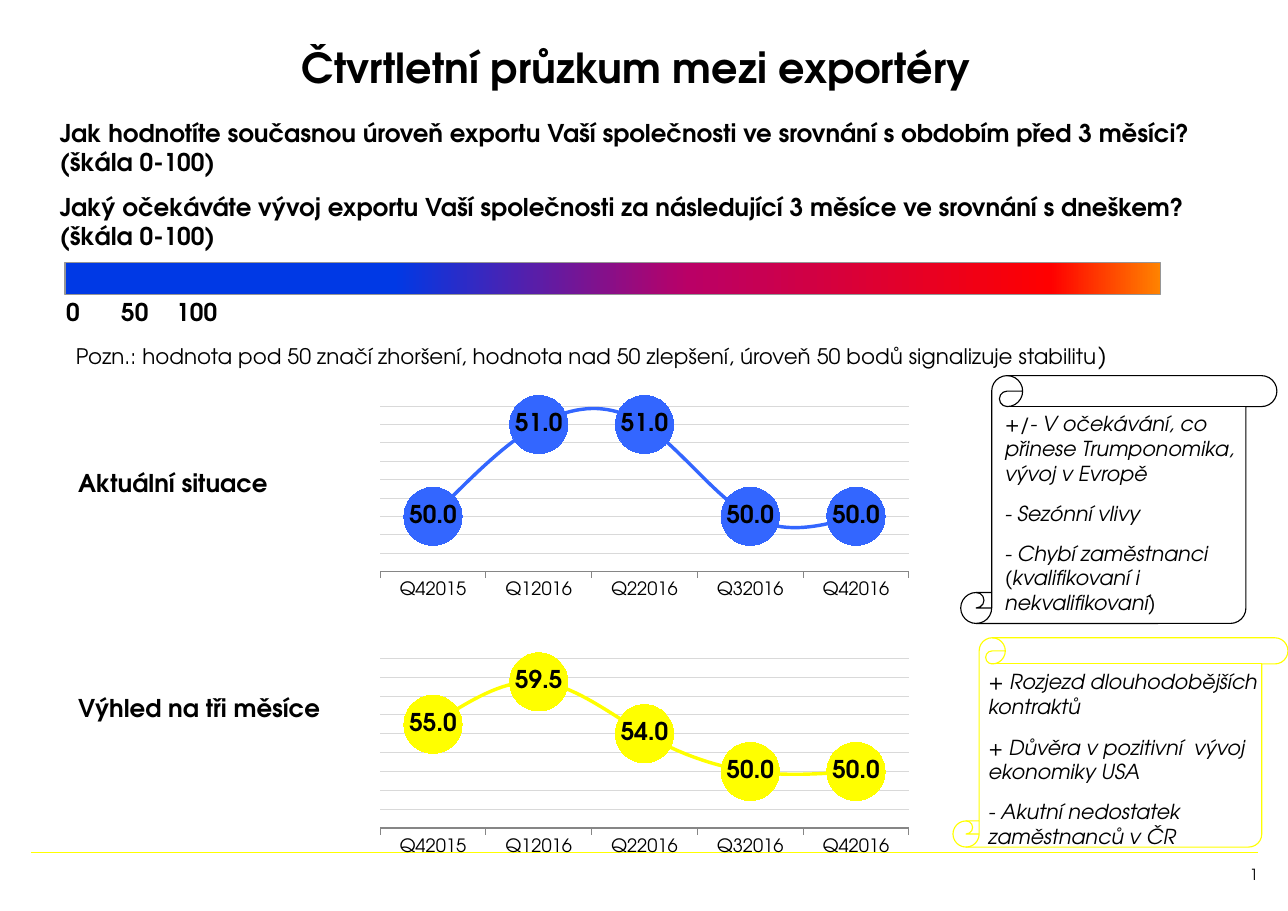
from dataclasses import dataclass

from lxml.etree import SubElement
from pptx import Presentation
from pptx.chart.data import CategoryChartData
from pptx.dml.color import RGBColor
from pptx.enum.chart import XL_CHART_TYPE as ChartType, XL_LABEL_POSITION as LabelPosition
from pptx.enum.chart import XL_MARKER_STYLE as MarkerStyle, XL_TICK_LABEL_POSITION as TickLabels
from pptx.enum.chart import XL_TICK_MARK as TickMark
from pptx.enum.shapes import MSO_CONNECTOR as Connector, MSO_SHAPE as Shape
from pptx.enum.text import MSO_ANCHOR as Anchor, MSO_AUTO_SIZE as AutoSize, PP_ALIGN as Align
from pptx.oxml import parse_xml
from pptx.oxml.ns import nsdecls, qn
from pptx.util import Inches, Pt


@dataclass(frozen=True)
class Theme:
    font: str = "TeX Gyre Adventor"
    black: str = "000000"
    blue: str = "3366FF"
    yellow: str = "FFFF00"
    grid: str = "D9D9D9"
    axis: str = "868686"
    bar_line: str = "969696"
    bar_stops: tuple = ((30, "0039E5"), (57, "BA0066"), (90, "FF0000"), (100, "FF8200"))
    title: float = 27
    heading: float = 16
    note: float = 14
    comment: float = 13.5
    category: float = 12
    page: float = 10


THEME = Theme()
PADDED = (0.12, 0.16, 0.12, 0)


def rgb(value):
    return RGBColor.from_string(value)


def style_font(font, size, bold=False, italic=False):
    font.name, font.size = THEME.font, Pt(size)
    font.bold, font.italic = bold, italic
    font.color.rgb = rgb(THEME.black)


def write_text(shape, paragraphs, size, bold=False, italic=False, align=Align.LEFT,
               anchor=Anchor.TOP, insets=PADDED, tabs=()):
    """A paragraph is a string, or a list of (text, size) runs."""
    frame = shape.text_frame
    frame.word_wrap, frame.auto_size, frame.vertical_anchor = True, AutoSize.NONE, anchor
    (frame.margin_left, frame.margin_top,
     frame.margin_right, frame.margin_bottom) = map(Inches, insets)
    for index, content in enumerate(paragraphs):
        paragraph = frame.add_paragraph() if index else frame.paragraphs[0]
        paragraph.alignment = align
        paragraph.space_before = Pt(10 if index else 0)
        properties = paragraph._p.get_or_add_pPr()
        properties.set("marL", "0")
        properties.set("indent", "0")
        SubElement(properties, qn("a:buNone"))
        if tabs:
            tab_list = SubElement(properties, qn("a:tabLst"))
            for position, kind in tabs:
                SubElement(tab_list, qn("a:tab"), pos=str(Inches(position)), algn=kind)
        for text, run_size in [(content, size)] if isinstance(content, str) else content:
            run = paragraph.add_run()
            run.text = text
            style_font(run.font, run_size, bold, italic)


class SurveySlide:
    def __init__(self, presentation):
        self.slide = presentation.slides.add_slide(presentation.slide_layouts[1])
        self.shapes = self.slide.shapes

    def placeholder(self, index, box, paragraphs, size, **style):
        shape = self.slide.placeholders[index]
        shape.left, shape.top, shape.width, shape.height = map(Inches, box)
        write_text(shape, paragraphs, size, **style)

    def text(self, box, paragraphs, size, **style):
        shape = self.shapes.add_textbox(*map(Inches, box))
        write_text(shape, paragraphs, size, **style)
        return shape

    def page_number(self, box):
        shape = self.text(box, ["3"], THEME.page, align=Align.RIGHT, insets=(0, 0, 0, 0))
        run = shape.text_frame.paragraphs[0].runs[0]._r
        run.tag = qn("a:fld")
        run.set("id", "{B6F15528-21DE-4FAA-801E-634DDDAF4B2B}")
        run.set("type", "slidenum")

    def rule(self, start, end, color):
        line = self.shapes.add_connector(Connector.STRAIGHT, *map(Inches, start + end))
        line.line.color.rgb, line.line.width = rgb(color), Pt(1)
        SubElement(line._element.spPr, qn("a:effectLst"))

    def outline(self, kind, box, color):
        shape = self.shapes.add_shape(kind, *map(Inches, box))
        shape.shadow.inherit = False
        shape.fill.background()
        shape.line.color.rgb, shape.line.width = rgb(color), Pt(0.75)
        return shape

    def gradient_bar(self, box):
        bar = self.outline(Shape.RECTANGLE, box, THEME.bar_line)
        stops = "".join(f'<a:gs pos="{position * 1000}"><a:srgbClr val="{color}"/></a:gs>'
                        for position, color in THEME.bar_stops)
        gradient = parse_xml(f'<a:gradFill {nsdecls("a")} rotWithShape="1"><a:gsLst>{stops}'
                             '</a:gsLst><a:lin ang="0" scaled="0"/></a:gradFill>')
        properties = bar._element.spPr
        properties.replace(properties.find(qn("a:noFill")), gradient)

    def scroll(self, box, text_box, paragraphs, color):
        self.outline(Shape.VERTICAL_SCROLL, box, color)
        self.text(text_box, paragraphs, THEME.comment, italic=True)

    def chart(self, box, quarters, values, color, scale, plot):
        """scale is (minimum, maximum, step); plot is x, y, w, h as shares of the chart."""
        data = CategoryChartData(number_format="0.0")
        data.categories = quarters
        data.add_series("Series 1", values)
        chart = self.shapes.add_chart(ChartType.LINE_MARKERS, *map(Inches, box), data).chart
        chart.has_legend = chart.has_title = False
        style_font(chart.font, THEME.category)

        category_axis, value_axis = chart.category_axis, chart.value_axis
        category_axis.major_tick_mark = TickMark.OUTSIDE
        category_axis.tick_label_position = TickLabels.LOW
        category_axis.format.line.color.rgb = rgb(THEME.axis)
        style_font(category_axis.tick_labels.font, THEME.category)
        value_axis.minimum_scale, value_axis.maximum_scale, value_axis.major_unit = scale
        value_axis.visible = False
        grid_line = value_axis.major_gridlines.format.line
        grid_line.color.rgb, grid_line.width = rgb(THEME.grid), Pt(0.5)

        line_plot = chart.plots[0]
        line_plot.vary_by_categories = False
        series = line_plot.series[0]
        series.smooth = True
        series.format.line.color.rgb, series.format.line.width = rgb(color), Pt(2.25)
        marker = series.marker
        marker.style, marker.size = MarkerStyle.CIRCLE, 38
        marker.format.fill.solid()
        marker.format.fill.fore_color.rgb = rgb(color)
        marker.format.line.color.rgb = rgb(color)
        labels = series.data_labels
        labels.show_value, labels.position = True, LabelPosition.CENTER
        labels.number_format, labels.number_format_is_linked = "0.0", False
        style_font(labels.font, THEME.heading, bold=True)

        plot_area = chart._chartSpace.chart.plotArea
        for old_layout in plot_area.findall(qn("c:layout")):
            plot_area.remove(old_layout)
        layout = parse_xml(f'<c:layout {nsdecls("c")}><c:manualLayout/></c:layout>')
        settings = [("layoutTarget", "inner"), ("xMode", "edge"), ("yMode", "edge"),
                    *zip("xywh", plot)]
        for name, value in settings:
            SubElement(layout[0], qn(f"c:{name}"), val=str(value))
        plot_area.insert(0, layout)


def main():
    presentation = Presentation()
    presentation.slide_width, presentation.slide_height = Inches(11.69), Inches(8.27)
    survey = SurveySlide(presentation)

    survey.placeholder(0, (2.74, 0.19, 8.49, 0.83), ["Čtvrtletní průzkum mezi exportéry"],
                       THEME.title, bold=True, anchor=Anchor.MIDDLE, insets=(0, 0, 0, 0))
    survey.placeholder(1, (0.42, 0.91, 10.86, 1.47), [
        "Jak hodnotíte současnou úroveň exportu Vaší společnosti ve srovnání s obdobím "
        "před 3 měsíci? (škála 0-100)",
        "Jaký očekáváte vývoj exportu Vaší společnosti za následující 3 měsíce ve srovnání "
        "s dneškem? (škála 0-100)"], THEME.heading, bold=True)
    survey.rule((0.28, 7.74), (11.42, 7.74), THEME.yellow)
    survey.page_number((6.76, 7.85, 4.66, 0.42))

    survey.gradient_bar((0.59, 2.38, 9.94, 0.29))
    survey.text((0.48, 2.54, 10.73, 0.5), ["0\t50\t100"], THEME.heading, bold=True,
                tabs=((4.89, "ctr"), (9.92, "r")))
    survey.text((0.59, 3.04, 10.84, 0.37), [[
        ("Pozn.: hodnota pod 50 značí zhoršení, hodnota nad 50 zlepšení, "
         "úroveň 50 bodů signalizuje stabilitu", THEME.note), (")", THEME.heading)]],
        THEME.note, insets=(0.1, 0.05, 0.1, 0.05))

    quarters = ["Q42015", "Q12016", "Q22016", "Q32016", "Q42016"]
    outlooks = [
        ("Aktuální situace", 4.09, 3.59, (50, 51, 51, 50, 50), THEME.blue,
         (49.4, 51.2, 0.2), (0.02, 0.05, 0.96, 0.8)),
        ("Výhled na tři měsíce", 6.13, 5.92, (55, 59.5, 54, 50, 50), THEME.yellow,
         (44, 62, 2), (0.02, 0.03, 0.96, 0.82)),
    ]
    for label, label_top, chart_top, values, color, scale, plot in outlooks:
        survey.text((0.59, label_top, 2.46, 0.5), [label], THEME.heading, bold=True)
        survey.chart((3.35, chart_top, 5, 1.88), quarters, values, color, scale, plot)

    survey.scroll((8.72, 3.41, 2.87, 2.25), (9, 3.57, 2.43, 1.76), [
        "+/- V očekávání, co přinese Trumponomika, vývoj v Evropě",
        "- Sezónní vlivy",
        "- Chybí zaměstnanci (kvalifikovaní i nekvalifikovaní)"], THEME.black)
    survey.scroll((8.65, 5.79, 3.04, 1.9), (8.85, 5.91, 2.75, 1.73), [
        [("+ ", THEME.note), ("Rozjezd dlouhodobějších kontraktů", THEME.comment)],
        "+ Důvěra v pozitivní  vývoj ekonomiky USA",
        "- Akutní nedostatek zaměstnanců v ČR"], THEME.yellow)

    presentation.save("out.pptx")


if __name__ == "__main__":
    main()
